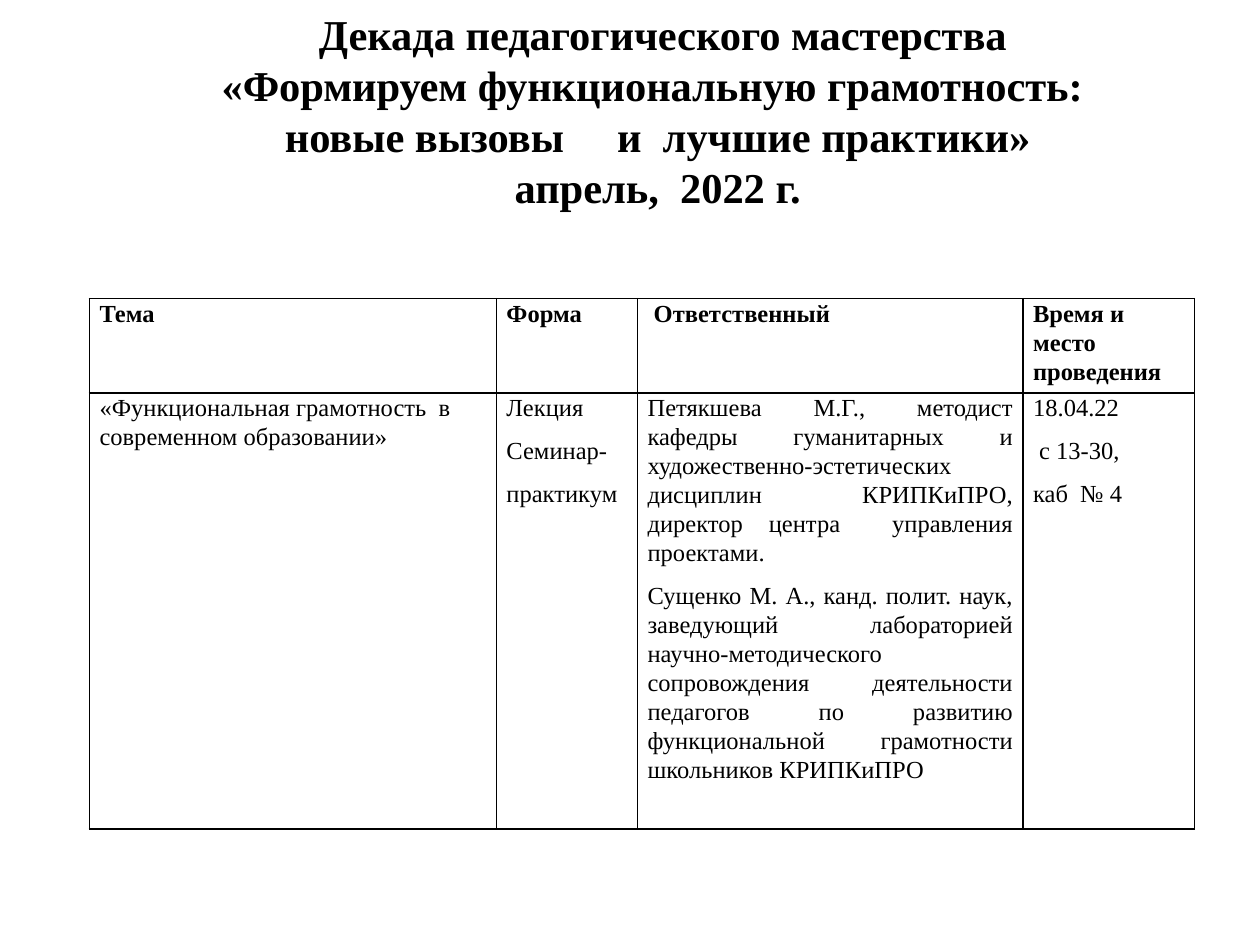
from lxml.etree import SubElement
from pptx import Presentation
from pptx.dml.color import RGBColor
from pptx.enum.text import MSO_ANCHOR, PP_ALIGN
from pptx.oxml.ns import qn
from pptx.util import Inches, Pt

BLACK = RGBColor(0, 0, 0)
FONT = "Times New Roman"
BORDER_WIDTH = Pt(1)

# Each line is a list of (text, extra letter spacing in points).
TITLE = [
    [(" Декада педагогического мастерства", 0)],
    [("«Формируем функциональную грамотность: ", 0)],
    [("новые вызовы", 0), (" ", 24.3), ("и", 0), (" ", 6), ("лучшие практики»", 0)],
    [("апрель,  2022 г.", 0)],
]
HEADERS = ["Тема", "Форма", " Ответственный", "Время и место проведения"]
SESSION = [
    ["«Функциональная грамотность  в современном образовании»"],
    ["Лекция", "Семинар-", "практикум"],
    [
        "Петякшева М.Г., методист кафедры гуманитарных и "
        "художественно-эстетических дисциплин КРИПКиПРО, "
        "директор центра  управления проектами.",
        "Сущенко М. А., канд. полит. наук, заведующий лабораторией "
        "научно-методического сопровождения деятельности педагогов "
        "по развитию функциональной грамотности школьников КРИПКиПРО",
    ],
    ["18.04.22", " с 13-30,", "каб  № 4"],
]
COLUMN_WIDTHS = [3.23, 1.12, 3.06, 1.36]
ROW_HEIGHTS = [0.69, 3.46]
RESPONSIBLE = 2


def set_attributes(obj, values):
    for name, value in values.items():
        setattr(obj, name, value)


def style_font(font, size, bold):
    set_attributes(font, {"name": FONT, "size": Pt(size), "bold": bold})
    font.color.rgb = BLACK


def add_title(slide, left, top, width, height):
    tf = slide.shapes.add_textbox(left, top, width, height).text_frame
    set_attributes(tf, {"word_wrap": True, "vertical_anchor": MSO_ANCHOR.MIDDLE,
                        "margin_top": 0, "margin_bottom": 0})
    p = tf.paragraphs[0]
    set_attributes(p, {"alignment": PP_ALIGN.CENTER, "line_spacing": Pt(29.1)})
    for i, line in enumerate(TITLE):
        if i:
            p.add_line_break()
        for text, spacing in line:
            r = p.add_run()
            r.text = text
            style_font(r.font, 24.3, True)
            if spacing:
                r._r.get_or_add_rPr().set("spc", str(round(spacing * 100)))


def add_borders(cell):
    properties = cell._tc.get_or_add_tcPr()
    for side in ("a:lnL", "a:lnR", "a:lnT", "a:lnB"):
        line = SubElement(properties, qn(side), w=str(BORDER_WIDTH))
        fill = SubElement(line, qn("a:solidFill"))
        SubElement(fill, qn("a:srgbClr"), val=str(BLACK))


def fill_cell(cell, paragraphs, is_header, alignment):
    set_attributes(cell, {"margin_left": Inches(0.08), "margin_right": Inches(0.08),
                          "margin_top": 0, "margin_bottom": 0})
    add_borders(cell)
    cell.fill.background()
    tf = cell.text_frame
    for i, text in enumerate(paragraphs):
        p = tf.add_paragraph() if i else tf.paragraphs[0]
        set_attributes(p, {"alignment": alignment, "line_spacing": 1.07,
                           "space_after": Pt(0 if is_header else 8)})
        r = p.add_run()
        r.text = text
        style_font(r.font, 14, is_header)


def add_schedule(slide, left, top, width, height):
    rows = [[[header] for header in HEADERS], SESSION]
    table = slide.shapes.add_table(len(rows), len(HEADERS),
                                   left, top, width, height).table
    set_attributes(table, {"first_row": False, "horz_banding": False})
    for column, share in zip(table.columns, COLUMN_WIDTHS):
        column.width = int(width * share / sum(COLUMN_WIDTHS))
    for row, share in zip(table.rows, ROW_HEIGHTS):
        row.height = int(height * share / sum(ROW_HEIGHTS))
    for i, row in enumerate(rows):
        for j, paragraphs in enumerate(row):
            justified = i > 0 and j == RESPONSIBLE
            fill_cell(table.cell(i, j), paragraphs, i == 0,
                      PP_ALIGN.JUSTIFY if justified else PP_ALIGN.LEFT)


def main():
    prs = Presentation()
    prs.slide_width, prs.slide_height = Inches(10), Inches(7.5)
    slide = prs.slides.add_slide(prs.slide_layouts[6])
    add_title(slide, Inches(0.75), Inches(0.03), Inches(8.94), Inches(1.69))
    add_schedule(slide, Inches(0.71), Inches(2.37), Inches(8.77), Inches(4.15))
    prs.save("out.pptx")


if __name__ == "__main__":
    main()
